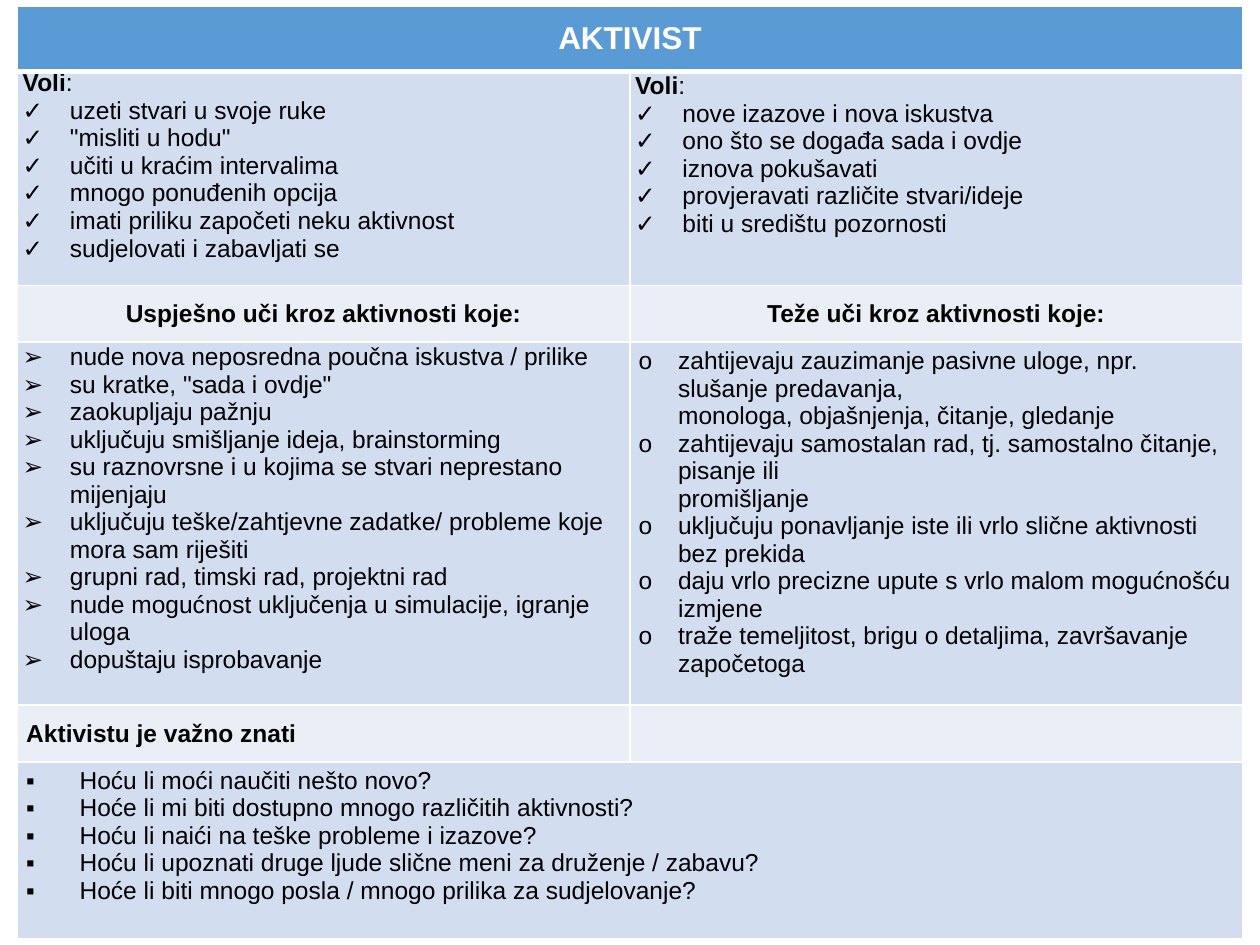
from dataclasses import dataclass

from lxml.etree import SubElement
from pptx import Presentation
from pptx.dml.color import RGBColor
from pptx.enum.text import MSO_ANCHOR, PP_ALIGN
from pptx.oxml import parse_xml
from pptx.oxml.ns import nsdecls, qn
from pptx.util import Pt


@dataclass(frozen=True)
class Theme:
    font: str = "Arial"
    title_size: float = 18
    body_size: float = 14
    title_fill: str = "5B9BD5"
    list_fill: str = "D2DEEF"
    head_fill: str = "EAEFF7"
    light: str = "FFFFFF"
    dark: str = "000000"


THEME = Theme()
COLUMNS = [350, 350]
ROWS = [37, 122.5, 32.2, 207.5, 32.4, 100.8]
NARROW = (3, 0.7, 3, 3)   # cell margins: left, top, right, bottom
NORMAL = (5, 3, 5, 3)

LIKES_LEFT = [
    "uzeti stvari u svoje ruke",
    "\"misliti u hodu\"",
    "učiti u kraćim intervalima",
    "mnogo ponuđenih opcija",
    "imati priliku započeti neku aktivnost",
    "sudjelovati i zabavljati se",
]
LIKES_RIGHT = [
    "nove izazove i nova iskustva",
    "ono što se događa sada i ovdje",
    "iznova pokušavati",
    "provjeravati različite stvari/ideje",
    "biti u središtu pozornosti",
]
LEARNS_WELL = [
    "nude nova neposredna poučna iskustva / prilike",
    "su kratke, \"sada i ovdje\"",
    "zaokupljaju pažnju",
    "uključuju smišljanje ideja, brainstorming",
    "su raznovrsne i u kojima se stvari neprestano mijenjaju",
    "uključuju teške/zahtjevne zadatke/ probleme koje mora sam riješiti",
    "grupni rad, timski rad, projektni rad",
    "nude mogućnost uključenja u simulacije, igranje uloga",
    "dopuštaju isprobavanje",
]
# A tuple holds an item and its unbulleted continuation
LEARNS_HARD = [
    ("zahtijevaju zauzimanje pasivne uloge, npr. slušanje predavanja,",
     "monologa, objašnjenja, čitanje, gledanje"),
    ("zahtijevaju samostalan rad, tj. samostalno čitanje, pisanje ili",
     "promišljanje"),
    "uključuju ponavljanje iste ili vrlo slične aktivnosti bez prekida",
    "daju vrlo precizne upute s vrlo malom mogućnošću izmjene",
    "traže temeljitost, brigu o detaljima, završavanje započetoga",
]
QUESTIONS = [
    "Hoću li moći naučiti nešto novo?",
    "Hoće li mi biti dostupno mnogo različitih aktivnosti?",
    "Hoću li naići na teške probleme i izazove?",
    "Hoću li upoznati druge ljude slične meni za druženje / zabavu?",
    "Hoće li biti mnogo posla / mnogo prilika za sudjelovanje?",
]


def style_cell(cell, fill, margins=NORMAL, anchor=MSO_ANCHOR.TOP, top=1, bottom=1):
    """Fill, margins and white borders of one cell."""
    cell.fill.solid()
    cell.fill.fore_color.rgb = RGBColor.from_string(fill)
    (cell.margin_left, cell.margin_top,
     cell.margin_right, cell.margin_bottom) = map(Pt, margins)
    cell.vertical_anchor = anchor
    tc_pr = cell._tc.get_or_add_tcPr()
    for i, (side, width) in enumerate(zip("LRTB", (1, 1, top, bottom))):
        tc_pr.insert(i, parse_xml(
            f'<a:ln{side} {nsdecls("a")} w="{Pt(width)}"><a:solidFill>'
            f'<a:srgbClr val="{THEME.light}"/></a:solidFill></a:ln{side}>'))


def add_run(p, text, bold=False, size=THEME.body_size, color=THEME.dark):
    r = p.add_run()
    r.text = text
    r.font.name = THEME.font
    r.font.size = Pt(size)
    r.font.bold = bold
    r.font.color.rgb = RGBColor.from_string(color)


def next_paragraph(tf):
    """The first paragraph while it is empty, then new ones."""
    first = tf.paragraphs[0]
    return tf.add_paragraph() if first.runs else first


def add_item(tf, text, indent, bullet=None):
    p = next_paragraph(tf)
    p_pr = p._p.get_or_add_pPr()
    p_pr.set("marL", str(Pt(indent)))
    p_pr.set("indent", str(Pt(-indent if bullet else 0)))
    if bullet:
        SubElement(p_pr, qn("a:buFont"), typeface=THEME.font)
        SubElement(p_pr, qn("a:buChar"), char=bullet)
    add_run(p, text)


def add_list(cell, items, bullet, indent):
    for item in items:
        text, *rest = (item,) if isinstance(item, str) else item
        add_item(cell.text_frame, text, indent, bullet)
        for line in rest:
            add_item(cell.text_frame, line, indent)


def add_likes(cell, items, spacing=None):
    p = next_paragraph(cell.text_frame)
    if spacing:
        p.line_spacing = Pt(spacing)
    add_run(p, "Voli", bold=True)
    add_run(p, ":")
    add_list(cell, items, "✓", 27)


def add_heading(cell, text, align=PP_ALIGN.CENTER, **look):
    p = next_paragraph(cell.text_frame)
    p.alignment = align
    add_run(p, text, bold=True, **look)


def add_grid(s):
    """Table with its column widths, row heights and merged rows."""
    frame = s.shapes.add_table(len(ROWS), len(COLUMNS), Pt(10), Pt(3.8),
                               Pt(sum(COLUMNS)), Pt(sum(ROWS)))
    table = frame.table
    table.first_row = table.horz_banding = False
    for column, width in zip(table.columns, COLUMNS):
        column.width = Pt(width)
    for row, height in zip(table.rows, ROWS):
        row.height = Pt(height)
    for i in (0, len(ROWS) - 1):
        table.cell(i, 0).merge(table.cell(i, 1))
    return table


def main():
    prs = Presentation()
    prs.slide_width, prs.slide_height = Pt(720), Pt(540)
    s = prs.slides.add_slide(prs.slide_layouts[6])
    table = add_grid(s)
    cell = table.cell

    # Looks of the rows
    middle = MSO_ANCHOR.MIDDLE
    for col in range(len(COLUMNS)):
        style_cell(cell(0, col), THEME.title_fill, anchor=middle, bottom=3)
        style_cell(cell(1, col), THEME.list_fill, NARROW, top=3)
        style_cell(cell(2, col), THEME.head_fill, anchor=middle)
        style_cell(cell(3, col), THEME.list_fill, NORMAL if col else NARROW)
        style_cell(cell(4, col), THEME.head_fill, anchor=middle)
        style_cell(cell(5, col), THEME.list_fill)

    # Title and likes
    add_heading(cell(0, 0), "AKTIVIST", size=THEME.title_size, color=THEME.light)
    add_likes(cell(1, 0), LIKES_LEFT, spacing=14)
    add_likes(cell(1, 1), LIKES_RIGHT)

    # Activities that help or hinder learning
    add_heading(cell(2, 0), "Uspješno uči kroz aktivnosti koje:")
    add_heading(cell(2, 1), "Teže uči kroz aktivnosti koje:")
    add_list(cell(3, 0), LEARNS_WELL, "➢", 27)
    add_list(cell(3, 1), LEARNS_HARD, "o", 22.5)

    # Questions
    add_heading(cell(4, 0), "Aktivistu je važno znati", PP_ALIGN.LEFT)
    add_list(cell(5, 0), QUESTIONS, "▪", 30.5)

    prs.save("out.pptx")


if __name__ == "__main__":
    main()
